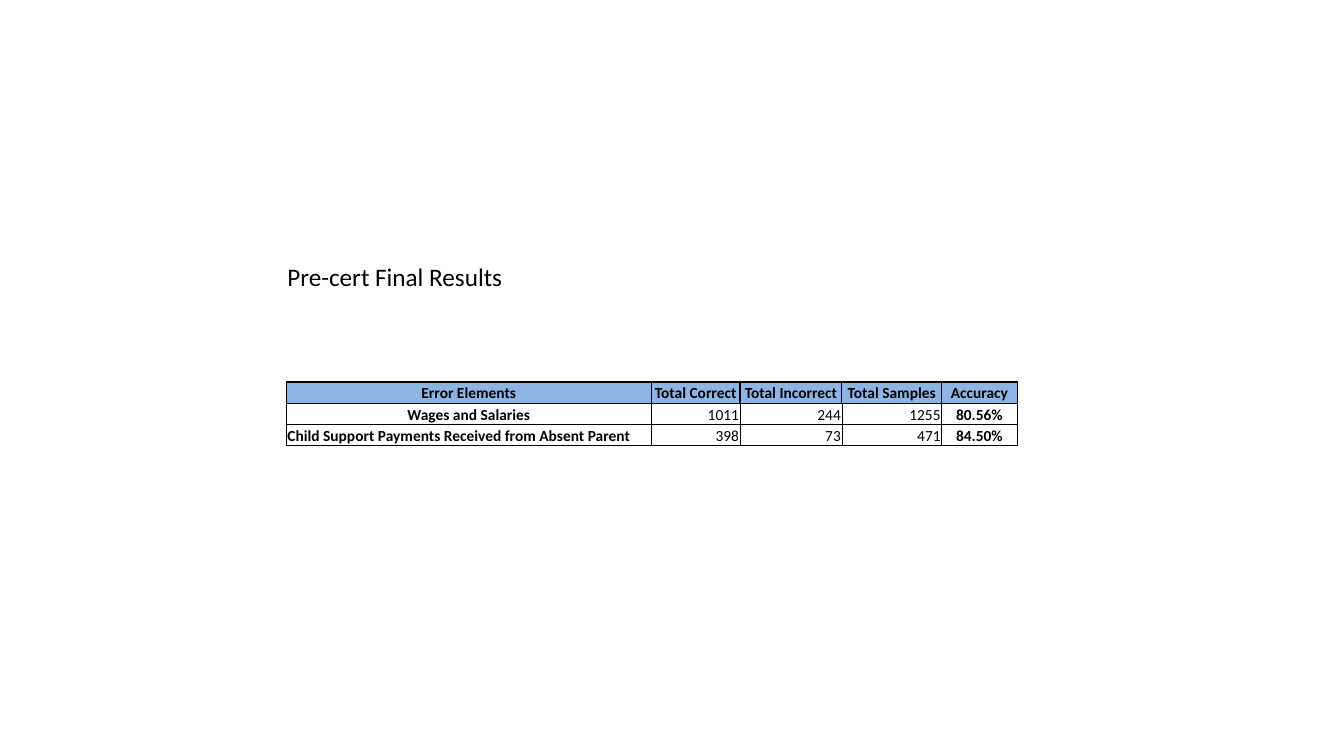
from dataclasses import dataclass

from lxml.etree import SubElement
from pptx import Presentation
from pptx.dml.color import RGBColor
from pptx.enum.text import MSO_ANCHOR as Anchor, MSO_AUTO_SIZE as AutoSize, PP_ALIGN as Align
from pptx.oxml.ns import qn
from pptx.util import Inches, Pt


@dataclass(frozen=True)
class Theme:
    font: str = "Calibri"
    ink: str = "000000"
    header_fill: str = "8DB4E2"
    title_size: float = 18
    table_size: float = 11
    header_line: float = 1
    body_line: float = 0.5


THEME = Theme()
HEADERS = ["Error Elements", "Total Correct", "Total Incorrect", "Total Samples", "Accuracy"]
RESULTS = [
    ["Wages and Salaries", "1011", "244", "1255", "80.56%"],
    ["Child Support Payments Received from Absent Parent", "398", "73", "471", "84.50%"],
]
COLUMN_WIDTHS = [3.62, 0.88, 1.01, 0.99, 0.75]
ROW_HEIGHT = 0.21


def write(frame, text, size, bold=False, align=Align.LEFT):
    """Put one formatted paragraph into a text frame."""
    paragraph = frame.paragraphs[0]
    paragraph.alignment = align
    run = paragraph.add_run()
    run.text = text
    run.font.name = THEME.font
    run.font.size = Pt(size)
    run.font.bold = bold
    run.font.color.rgb = RGBColor.from_string(THEME.ink)


def set_borders(cell, is_header):
    properties = cell._tc.get_or_add_tcPr()
    for side in "LRTB":
        thick = is_header and side != "B"
        width = THEME.header_line if thick else THEME.body_line
        line = SubElement(properties, qn(f"a:ln{side}"), w=str(Pt(width)))
        fill = SubElement(line, qn("a:solidFill"))
        SubElement(fill, qn("a:srgbClr"), val=THEME.ink)


def format_cell(cell, text, is_header, bold, align):
    cell.vertical_anchor = Anchor.BOTTOM
    cell.margin_left = cell.margin_right = cell.margin_top = Inches(0.01)
    cell.margin_bottom = 0
    set_borders(cell, is_header)
    if is_header:
        cell.fill.solid()
        cell.fill.fore_color.rgb = RGBColor.from_string(THEME.header_fill)
    else:
        cell.fill.background()
    write(cell.text_frame, text, size=THEME.table_size, bold=bold, align=align)


def add_title(slide, text, left, top, width, height):
    title = slide.shapes.title
    title.left, title.top = Inches(left), Inches(top)
    title.width, title.height = Inches(width), Inches(height)
    frame = title.text_frame
    frame.word_wrap = True
    frame.auto_size = AutoSize.SHAPE_TO_FIT_TEXT
    frame.vertical_anchor = Anchor.TOP
    write(frame, text, size=THEME.title_size)


def add_results_table(slide, left, top):
    rows = [HEADERS] + RESULTS
    table = slide.shapes.add_table(
        len(rows), len(HEADERS), Inches(left), Inches(top),
        Inches(sum(COLUMN_WIDTHS)), Inches(ROW_HEIGHT * len(rows))).table
    for column, width in zip(table.columns, COLUMN_WIDTHS):
        column.width = Inches(width)

    last_row, last_column = len(rows) - 1, len(HEADERS) - 1
    for r, values in enumerate(rows):
        table.rows[r].height = Inches(ROW_HEIGHT)
        for c, value in enumerate(values):
            is_header = r == 0
            is_count = not is_header and 0 < c < last_column
            # Counts sit right, the long last label left, the rest centred
            align = Align.RIGHT if is_count else Align.CENTER
            if (r, c) == (last_row, 0):
                align = Align.LEFT
            format_cell(table.cell(r, c), value, is_header, bold=not is_count, align=align)


def main():
    presentation = Presentation()
    presentation.slide_width = Inches(13.33)
    presentation.slide_height = Inches(7.5)
    slide = presentation.slides.add_slide(presentation.slide_layouts[5])

    # Heading
    add_title(slide, "Pre-cert Final Results", 2.75, 2.54, 6.01, 0.4)
    # Accuracy results
    add_results_table(slide, 2.84, 3.79)

    presentation.save("out.pptx")


if __name__ == "__main__":
    main()
